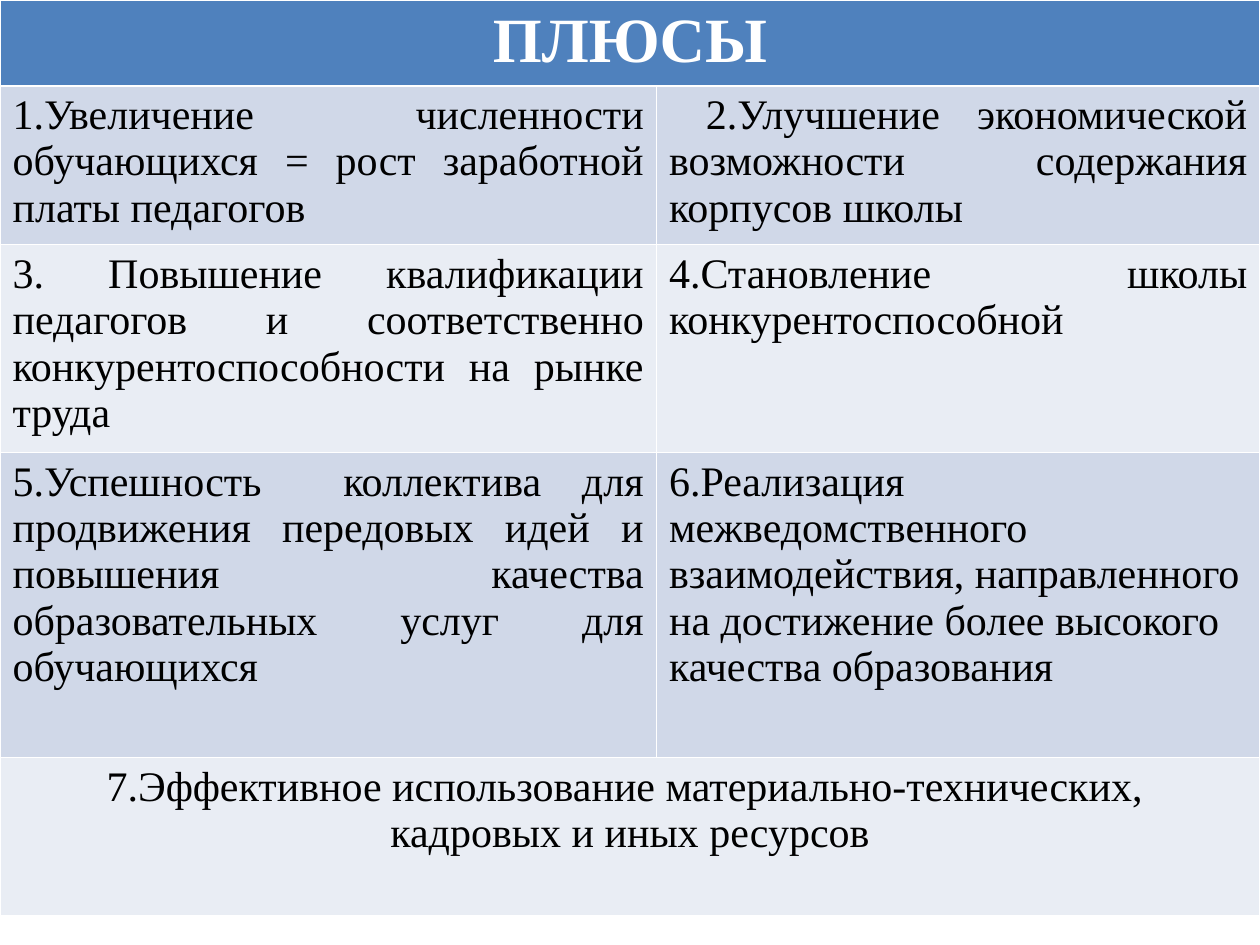
import pptx
import pptx.dml.color
import pptx.enum.text
import pptx.util

Cm = pptx.util.Cm
ALIGN = pptx.enum.text.PP_ALIGN
FONT = "Times New Roman"
COLORS = {
    "header": "4F81BD",
    "band_dark": "D0D8E8",
    "band_light": "E9EDF4",
    "header_text": "FFFFFF",
    "text": "000000",
}
COL_SHARES = [0.521, 0.479]
ROW_HEIGHTS = [1.73, 3.2, 4.19, 6.15, 3.2]
TITLE = "ПЛЮСЫ"
PAIRS = [
    (
        "1.Увеличение численности обучающихся = рост заработной платы педагогов",
        " 2.Улучшение экономической возможности содержания корпусов школы",
    ),
    (
        "3. Повышение квалификации педагогов и соответственно "
        "конкурентоспособности на рынке труда",
        "4.Становление школы конкурентоспособной",
    ),
    (
        "5.Успешность  коллектива для продвижения передовых идей и повышения "
        "качества образовательных услуг для обучающихся",
        "6.Реализация межведомственного взаимодействия, направленного "
        "на достижение более высокого качества образования",
    ),
]
SUMMARY = [
    "7.Эффективное использование материально-технических, ",
    "кадровых и иных ресурсов",
]


def rgb(name):
    """Return the named colour."""
    return pptx.dml.color.RGBColor.from_string(COLORS[name])


def fill_cell(cell, fill, lines, align, size=24, color="text", bold=False):
    """Colour a cell and write its paragraphs."""
    cell.fill.solid()
    cell.fill.fore_color.rgb = rgb(fill)
    tf = cell.text_frame
    for i, line in enumerate(lines):
        p = tf.add_paragraph() if i else tf.paragraphs[0]
        p.alignment = align
        r = p.add_run()
        r.text = line
        r.font.name = FONT
        r.font.size = pptx.util.Pt(size)
        r.font.bold = bold
        r.font.color.rgb = rgb(color)


def add_advantages_table(s, left, top, width):
    """Place the table of advantages with its header and summary rows."""
    height = Cm(sum(ROW_HEIGHTS))
    table = s.shapes.add_table(
        len(ROW_HEIGHTS), len(COL_SHARES), left, top, width, height
    ).table
    for col, share in zip(table.columns, COL_SHARES):
        col.width = int(width * share)
    for row, row_height in zip(table.rows, ROW_HEIGHTS):
        row.height = Cm(row_height)

    last = len(ROW_HEIGHTS) - 1
    for i in (0, last):
        table.cell(i, 0).merge(table.cell(i, 1))
    fill_cell(table.cell(0, 0), "header", [TITLE], ALIGN.CENTER, 36, "header_text", True)
    for i, pair in enumerate(PAIRS, start=1):
        band = "band_dark" if i % 2 else "band_light"
        for j, text in enumerate(pair):
            align = ALIGN.LEFT if (i, j) == (3, 1) else ALIGN.JUSTIFY
            fill_cell(table.cell(i, j), band, [text], align)
    fill_cell(table.cell(last, 0), "band_light", SUMMARY, ALIGN.CENTER)


def main():
    """Build and save the presentation."""
    prs = pptx.Presentation()
    prs.slide_width = Cm(25.4)
    prs.slide_height = Cm(19.05)
    s = prs.slides.add_slide(prs.slide_layouts[6])
    add_advantages_table(s, 0, 0, prs.slide_width)
    prs.save("out.pptx")


if __name__ == "__main__":
    main()
